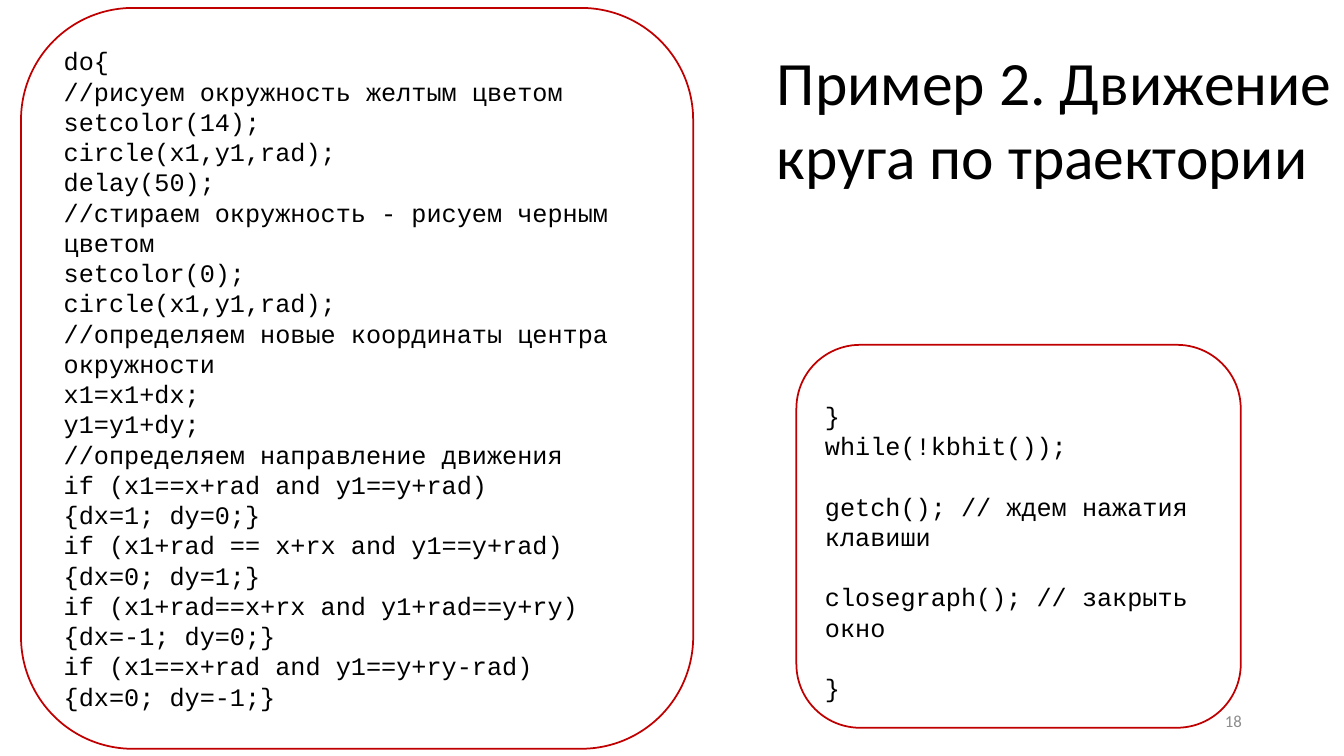
from pptx import Presentation
from pptx.dml.color import RGBColor
from pptx.enum.shapes import MSO_SHAPE as Shape
from pptx.enum.text import MSO_ANCHOR as Anchor, PP_ALIGN as Align
from pptx.util import Cm, Pt

BLACK = RGBColor(0x00, 0x00, 0x00)
RED = RGBColor(0xC0, 0x00, 0x00)
GREY = RGBColor(0x8C, 0x8C, 0x8C)

CODE_LINE = Pt(21.6)
CODE_FONT = {"name": "Courier New", "size": Pt(18)}
TITLE_FONT = {"name": "Calibri", "size": Pt(44)}
NUMBER_FONT = {"name": "Calibri", "size": Pt(12)}

LOOP_CODE = """do{
//рисуем окружность желтым цветом
setcolor(14);
circle(x1,y1,rad);
delay(50);
//стираем окружность - рисуем черным цветом
setcolor(0);
circle(x1,y1,rad);
//определяем новые координаты центра окружности
x1=x1+dx;
y1=y1+dy;
//определяем направление движения
if (x1==x+rad and y1==y+rad)
{dx=1; dy=0;}
if (x1+rad == x+rx and y1==y+rad)
{dx=0; dy=1;}
if (x1+rad==x+rx and y1+rad==y+ry)
{dx=-1; dy=0;}
if (x1==x+rad and y1==y+ry-rad)
{dx=0; dy=-1;}"""

END_CODE = """}
while(!kbhit());

getch(); // ждем нажатия клавиши

closegraph(); // закрыть окно

}"""


def apply_format(target, values):
    """Set each named attribute of the target."""
    for name, value in values.items():
        setattr(target, name, value)


def add_span(para, text, font, color):
    """Add formatted text to a paragraph."""
    span = para.add_run()
    span.text = text
    apply_format(span.font, font)
    span.font.color.rgb = color


def add_label(page, place, text, font, color, align, anchor):
    """Add a wrapped text box with one paragraph."""
    box = page.shapes.add_textbox(*map(Cm, place))
    apply_format(box.text_frame, {"word_wrap": True, "vertical_anchor": anchor})
    para = box.text_frame.paragraphs[0]
    para.alignment = align
    add_span(para, text, font, color)


def add_code_panel(page, place, code, top_margin):
    """Add a rounded outline holding code, with a gap before each later block."""
    panel = page.shapes.add_shape(Shape.ROUNDED_RECTANGLE, *map(Cm, place))
    panel.shadow.inherit = False
    panel.fill.background()
    panel.line.color.rgb = RED
    panel.line.width = Pt(1.25)
    frame = panel.text_frame
    apply_format(frame, {"word_wrap": True, "vertical_anchor": Anchor.MIDDLE,
                         "margin_top": Cm(top_margin)})
    gap = Pt(0)
    for line in code.splitlines():
        if not line:
            gap = CODE_LINE
            continue
        para = frame.add_paragraph() if frame.text else frame.paragraphs[0]
        apply_format(para, {"alignment": Align.LEFT, "line_spacing": CODE_LINE,
                            "space_before": gap})
        add_span(para, line, CODE_FONT, BLACK)
        gap = Pt(0)


def main():
    """Build and save the slide."""
    deck = Presentation()
    apply_format(deck, {"slide_width": Cm(33.87), "slide_height": Cm(19.05)})
    page = deck.slides.add_slide(deck.slide_layouts[6])
    add_label(page, (23.93, 17.65, 7.62, 1.02), "18", NUMBER_FONT, GREY,
              Align.RIGHT, Anchor.MIDDLE)
    add_code_panel(page, (0.53, 0.2, 16.94, 18.67), LOOP_CODE, 0.13)
    add_code_panel(page, (20.07, 8.69, 11.2, 9.65), END_CODE, 0.89)
    add_label(page, (19.33, 0.99, 14.53, 4.01),
              "Пример 2. Движение круга по траектории", TITLE_FONT, BLACK,
              Align.LEFT, Anchor.TOP)
    deck.save("out.pptx")


if __name__ == "__main__":
    main()
